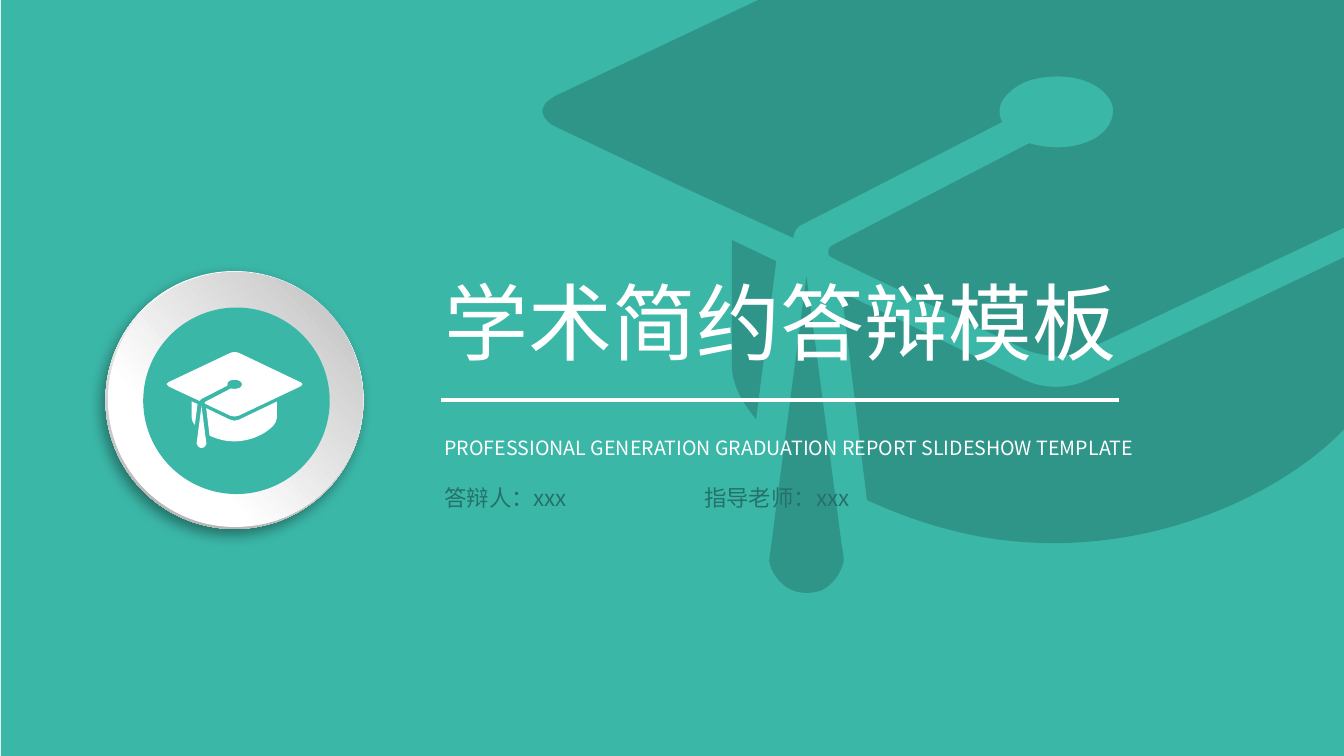
import lxml.etree
import pptx
import pptx.dml.color
import pptx.enum.shapes
import pptx.oxml
import pptx.oxml.ns
import pptx.util
from pptx.util import Cm

FONT = "Noto Sans CJK SC"
TEAL, DEEP_TEAL, INK_TEAL, WHITE = "3BB7A8", "2F9589", "247269", "FFFFFF"
SLIDE_WIDTH, SLIDE_HEIGHT = 33.87, 19.05

# Graduation cap in its own units: two numbers are a corner, six a Bézier curve.
CAP_LEFT, CAP_TOP, CAP_WIDTH = 5.38, -1.32, 10.19
BOARD = [
    (10.08, -1.21), (10.31, -1.35, 10.62, -1.35, 10.86, -1.23), (15.43, 0.95),
    (15.5, 0.98, 15.58, 1.03, 15.57, 1.11), (15.56, 1.19, 15.5, 1.23, 15.44, 1.26),
    (10.8, 3.46), (10.61, 3.55, 10.38, 3.55, 10.18, 3.47), (8.55, 2.7),
    (8.44, 2.64, 8.33, 2.6, 8.23, 2.54), (8.2, 2.5, 8.22, 2.45, 8.26, 2.43),
    (10.21, 1.42), (10.42, 1.48, 10.65, 1.48, 10.85, 1.38),
    (10.94, 1.33, 11.03, 1.24, 11.04, 1.13), (11.06, 1.02, 10.98, 0.93, 10.9, 0.87),
    (10.74, 0.76, 10.53, 0.74, 10.33, 0.77), (10.19, 0.79, 10.06, 0.85, 9.97, 0.96),
    (9.91, 1.03, 9.9, 1.12, 9.94, 1.21), (7.97, 2.22),
    (7.91, 2.24, 7.87, 2.3, 7.87, 2.36), (6.72, 1.83), (5.52, 1.26),
    (5.45, 1.23, 5.38, 1.17, 5.38, 1.09), (5.39, 1.02, 5.47, 0.97, 5.53, 0.94),
]
LEFT_CROWN = [(7.26, 2.38), (7.7, 2.59), (7.5, 4.16), (7.38, 4.01, 7.26, 3.83, 7.26, 3.63)]
RIGHT_CROWN = [
    (10.81, 3.76), (13.65, 2.4), (13.65, 3.65), (13.64, 3.84, 13.54, 4, 13.43, 4.15),
    (13.22, 4.4, 12.96, 4.6, 12.68, 4.77), (11.81, 5.29, 10.76, 5.5, 9.76, 5.33),
    (9.36, 5.26, 8.97, 5.13, 8.6, 4.96), (8.35, 2.9), (10.12, 3.75),
    (10.33, 3.86, 10.59, 3.87, 10.81, 3.76),
]
TASSEL = [
    (7.63, 5.56), (8, 2.74), (8.35, 5.41), (8.36, 5.46, 8.37, 5.52, 8.37, 5.57),
    (8.34, 5.69, 8.26, 5.81, 8.14, 5.86), (8.02, 5.9, 7.87, 5.89, 7.77, 5.8),
    (7.7, 5.74, 7.64, 5.65, 7.63, 5.56),
]


def qn(tag):
    return pptx.oxml.ns.qn(tag)


def rgb(hex_colour):
    return pptx.dml.color.RGBColor.from_string(hex_colour)


def paint(shape, colour):
    shape.shadow.inherit = False
    shape.line.fill.background()
    shape.fill.solid()
    shape.fill.fore_color.rgb = rgb(colour)


def paint_gradient(shape, angle, stops):
    """Fill with two (position, colour) stops; the angle runs counter-clockwise."""
    shape.shadow.inherit = False
    shape.line.fill.background()
    shape.fill.gradient()
    shape.fill.gradient_angle = angle
    for stop, (position, colour) in zip(shape.fill.gradient_stops, stops):
        stop.position = position
        stop.color.rgb = rgb(colour)


def cast_shadow(shape):
    effects = shape.element.spPr.find(qn("a:effectLst"))
    effects.append(pptx.oxml.parse_xml(
        f'<a:outerShdw {pptx.oxml.ns.nsdecls("a")} blurRad="127000" dist="63500" '
        'dir="7380000" algn="ctr" rotWithShape="0"><a:srgbClr val="000000">'
        '<a:alpha val="39000"/></a:srgbClr></a:outerShdw>'))


def add_outline(shapes, outline):
    """Draw parts given as flat EMU lists, bending the six-number ones into curves."""
    anchors = [part[-2:] for part in outline]
    builder = shapes.build_freeform(*anchors[0])
    builder.add_line_segments(anchors[1:], close=True)
    shape = builder.convert_to_shape()
    left, top = (min(values) for values in zip(*anchors))
    segments = list(shape.element.spPr.iter(qn("a:lnTo")))
    for part, segment in zip(outline[1:], segments):
        if len(part) == 6:
            curve = lxml.etree.Element(qn("a:cubicBezTo"))
            for x, y in zip(part[::2], part[1::2]):
                point = lxml.etree.SubElement(curve, qn("a:pt"))
                point.set("x", str(x - left))
                point.set("y", str(y - top))
            segment.getparent().replace(segment, curve)
    return shape


def add_cap(shapes, left, top, width, colour):
    cap = shapes.add_group_shape()
    scale = width / CAP_WIDTH
    origins = ((left, CAP_LEFT), (top, CAP_TOP))
    for outline in (BOARD, LEFT_CROWN, RIGHT_CROWN, TASSEL):
        placed = []
        for part in outline:
            placed.append([])
            for index, value in enumerate(part):
                edge, origin = origins[index % 2]
                placed[-1].append(int(Cm(edge + (value - origin) * scale)))
        paint(add_outline(cap.shapes, placed), colour)


def add_disc(shapes, left, top, diameter):
    return shapes.add_shape(
        pptx.enum.shapes.MSO_SHAPE.OVAL, Cm(left), Cm(top), Cm(diameter), Cm(diameter))


def add_badge(shapes, left, top, size):
    badge = shapes.add_group_shape().shapes
    rim = add_disc(badge, left, top, size)
    paint_gradient(rim, 252.7, [(0.17, WHITE), (0.88, "B8B8B8")])
    cast_shadow(rim)
    ring = add_disc(badge, left + 0.06, top + 0.03, size - 0.08)
    paint_gradient(ring, 42, [(0.29, WHITE), (0.98, "BFBFBF")])
    paint(add_disc(badge, left + 0.95, top + 0.92, 4.7), TEAL)
    add_cap(badge, left + 1.54, top + 2.04, 3.42, WHITE)


def add_text(shapes, left, top, width, height, words, size, colour):
    box = shapes.add_textbox(Cm(left), Cm(top), Cm(width), Cm(height))
    box.text_frame.word_wrap = True
    run = box.text_frame.paragraphs[0].add_run()
    run.text = words
    for attribute, value in {"name": FONT, "size": pptx.util.Pt(size)}.items():
        setattr(run.font, attribute, value)
    run.font.color.rgb = rgb(colour)
    east_asian = lxml.etree.SubElement(run.font._element, qn("a:ea"))
    east_asian.set("typeface", FONT)


def add_heading(shapes, left, top, width):
    add_text(shapes, left, top, width, 2.82, "学术简约答辩模板", 60, WHITE)
    add_text(shapes, left, top + 4.19, width, 0.86,
             "PROFESSIONAL GENERATION GRADUATION REPORT SLIDESHOW TEMPLATE", 14, WHITE)
    people = shapes.add_group_shape().shapes
    for offset, span, words in ((0, 5.26, "答辩人：xxx"), (6.55, 6.15, "指导老师：xxx")):
        add_text(people, left + offset, top + 5.39, span, 0.94, words, 16, INK_TEAL)
    rule_y = Cm(top + 3.4)
    rule = shapes.add_connector(
        pptx.enum.shapes.MSO_CONNECTOR.STRAIGHT,
        Cm(left + 0.16), rule_y, Cm(left + 17.25), rule_y)
    rule.line.color.rgb = rgb(WHITE)
    rule.line.width = pptx.util.Pt(3)
    lxml.etree.SubElement(rule.element.spPr, qn("a:effectLst"))


def add_cover(presentation):
    shapes = presentation.slides.add_slide(presentation.slide_layouts[6]).shapes
    backdrop = shapes.add_shape(
        pptx.enum.shapes.MSO_SHAPE.RECTANGLE,
        Cm(0.02), 0, Cm(SLIDE_WIDTH), Cm(SLIDE_HEIGHT))
    paint(backdrop, TEAL)
    add_cap(shapes, 13.67, -3.35, 25.88, DEEP_TEAL)
    add_badge(shapes, 2.66, 6.83, 6.5)
    add_heading(shapes, 10.95, 6.68, 22.91)


def main():
    presentation = pptx.Presentation()
    presentation.slide_width = Cm(SLIDE_WIDTH)
    presentation.slide_height = Cm(SLIDE_HEIGHT)
    add_cover(presentation)
    presentation.save("out.pptx")


if __name__ == "__main__":
    main()
